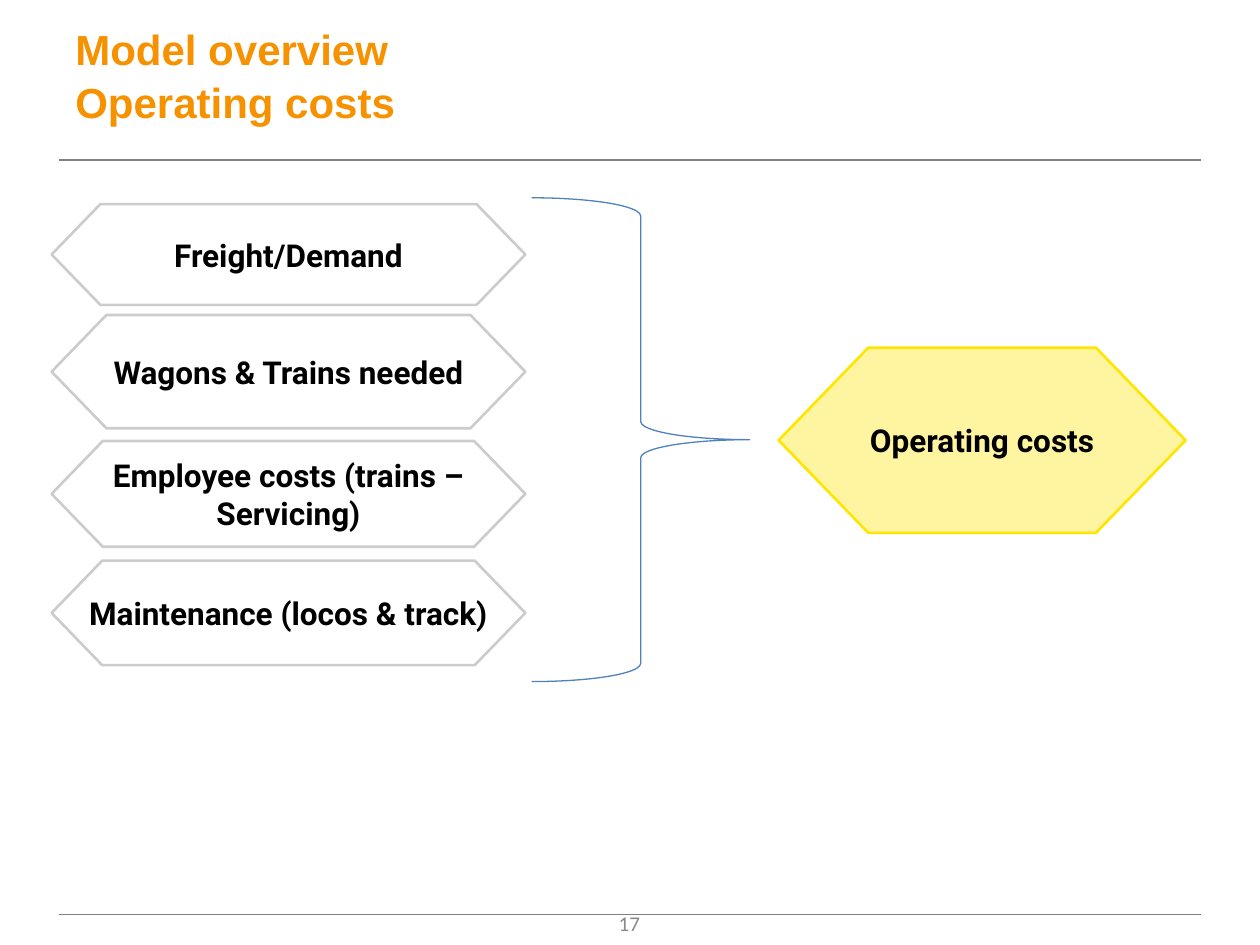
"""Build the operating costs overview slide: four cost drivers braced into one result."""
from lxml import etree
from pptx import Presentation
from pptx.dml.color import RGBColor
from pptx.enum.shapes import MSO_CONNECTOR, MSO_SHAPE
from pptx.enum.text import MSO_ANCHOR, PP_ALIGN
from pptx.oxml.ns import qn
from pptx.util import Inches, Pt

HEXAGON, BRACE = MSO_SHAPE.HEXAGON, MSO_SHAPE.RIGHT_BRACE
STRAIGHT = MSO_CONNECTOR.STRAIGHT
MIDDLE = MSO_ANCHOR.MIDDLE
LEFT, CENTER = PP_ALIGN.LEFT, PP_ALIGN.CENTER

COLORS = {
    "title": "F69200", "rule": "808080", "number": "898989", "text": "000000",
    "driver": "FFFFFF", "driver_line": "CCCCCC", "result": "FFE600", "brace": "4F81BD",
}
TITLE = "Model overview\nOperating costs"
PAGE_NUMBER = "17"
RESULT = "Operating costs"
DRIVERS = [
    ("Freight/Demand", 16.2, 8),
    ("Wagons & Trains needed", 25, 9),
    ("Employee costs (trains –\nServicing)", 35, 8.4),
    ("Maintenance (locos & track)", 44.5, 8.3),
]
RULE_ROWS = (12.7, 72.6)

deck = Presentation()
deck.slide_width, deck.slide_height = Inches(10), Inches(7.5)
COLUMN, ROW = deck.slide_width / 100, deck.slide_height / 75
page = deck.slides.add_slide(deck.slide_layouts[6])


def place(left, top, width, height):
    """Turn grid columns and rows into slide lengths."""
    return [round(n) for n in (left * COLUMN, top * ROW, width * COLUMN, height * ROW)]


def color(name):
    """Look up a named colour."""
    return RGBColor.from_string(COLORS[name])


def write(shape, text, font, size, tint, align, bold=True, spacing=None):
    """Fill a shape with evenly formatted, vertically centred text."""
    frame = shape.text_frame
    frame.text = text
    frame.vertical_anchor = MIDDLE
    for para in frame.paragraphs:
        para.alignment = align
        para.line_spacing = spacing
        for span in para.runs:
            span.font.name, span.font.size, span.font.bold = font, Pt(size), bold
            span.font.color.rgb = color(tint)


def add_label(text, spot, *style):
    """Add a wrapping text box."""
    box = page.shapes.add_textbox(*place(*spot))
    box.text_frame.word_wrap = True
    write(box, text, *style)


def add_hexagon(text, spot, fill, line):
    """Add an outlined hexagon with a bold label."""
    box = page.shapes.add_shape(HEXAGON, *place(*spot))
    box.shadow.inherit = False
    box.adjustments[0] = 0.484
    box.fill.solid()
    box.fill.fore_color.rgb = color(fill)
    box.line.color.rgb, box.line.width = color(line), Pt(1.5)
    frame = box.text_frame
    frame.word_wrap = False
    frame.margin_left = frame.margin_right = Inches(0.04)
    frame.margin_top = frame.margin_bottom = Inches(0.04)
    write(box, text, "Roboto", 18, "text", CENTER)
    return box


for row in RULE_ROWS:
    left, top, width, _ = place(4.7, row, 90.6, 0)
    rule = page.shapes.add_connector(STRAIGHT, left, top, left + width, top)
    rule.line.color.rgb, rule.line.width = color("rule"), Pt(0.75)
    etree.SubElement(rule.element.spPr, qn("a:effectLst"))

add_label(PAGE_NUMBER, (38.3, 71.3, 23.3, 4), "Calibri", 12, "number", CENTER, False)
add_label(TITLE, (5, 0.3, 90, 11.2), "Arial", 24, "title", LEFT, True, 1.05)

result = add_hexagon(RESULT, (61.8, 27.6, 32.3, 14.7), "result", "result")
tint = result.element.spPr.find(qn("a:solidFill"))[0]
etree.SubElement(tint, qn("a:alpha"), val="37000")

for text, top, height in DRIVERS:
    add_hexagon(text, (4.1, top, 37.6, height), "driver", "driver_line")

brace = page.shapes.add_shape(BRACE, *place(42.2, 15.7, 17.3, 38.4))
brace.shadow.inherit = False
brace.fill.background()
brace.line.color.rgb, brace.line.width = color("brace"), Pt(0.75)

deck.save("out.pptx")
